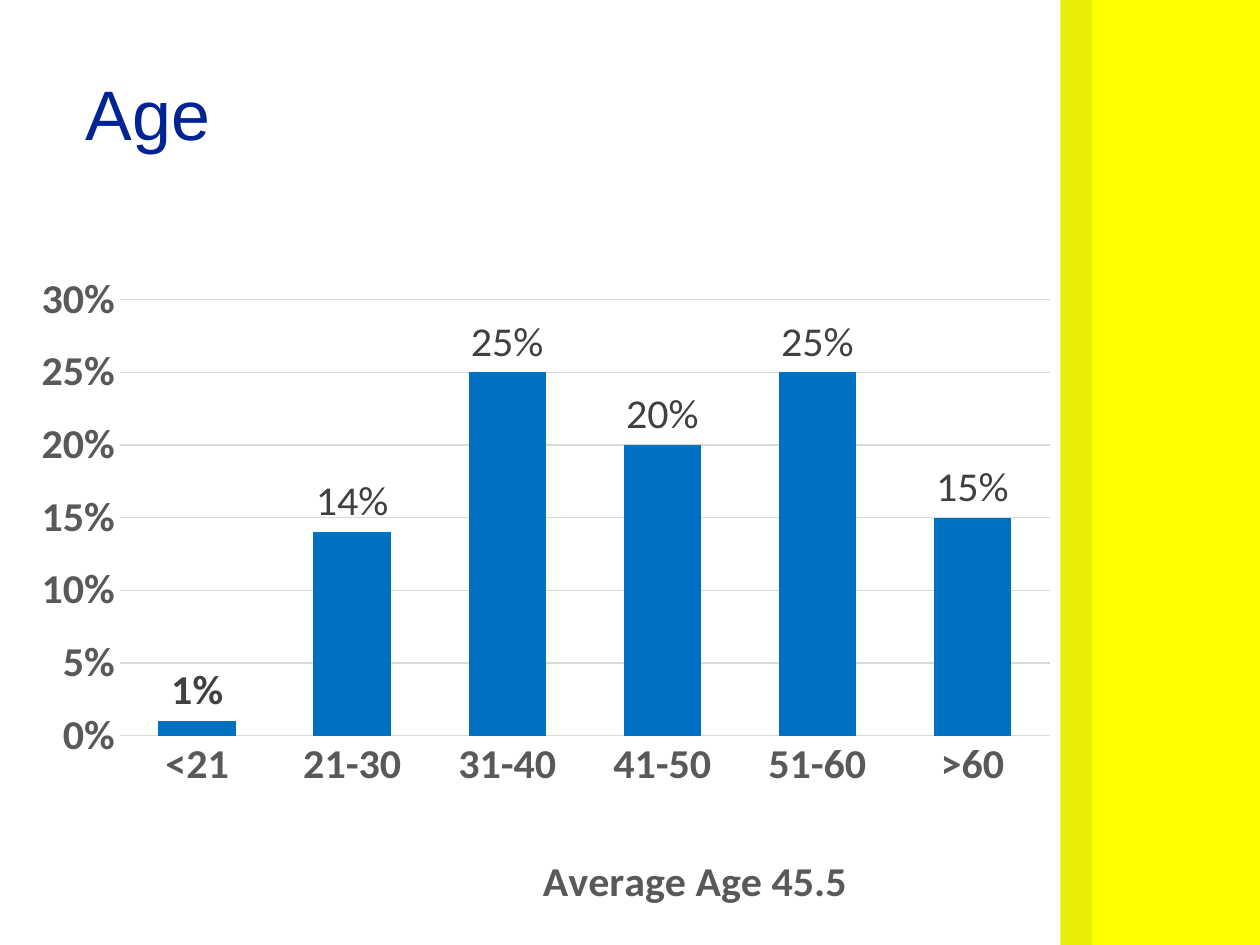
import pptx
import pptx.chart.data
import pptx.dml.color
import pptx.enum.chart
import pptx.enum.shapes
import pptx.enum.text
import pptx.oxml
import pptx.oxml.ns
import pptx.util

Pt = pptx.util.Pt
RGBColor = pptx.dml.color.RGBColor
qn = pptx.oxml.ns.qn

YELLOW = RGBColor(0xFF, 0xFF, 0x00)
OLIVE = RGBColor(0xE9, 0xEE, 0x09)
NAVY = RGBColor(0x00, 0x23, 0x95)
BLUE = RGBColor(0x00, 0x70, 0xC0)
BLACK = RGBColor(0x00, 0x00, 0x00)
AXIS_GREY = RGBColor(0x59, 0x59, 0x59)
LABEL_GREY = RGBColor(0x40, 0x40, 0x40)
GRID_GREY = RGBColor(0xD9, 0xD9, 0xD9)

TITLE = "Age"
AXIS_TITLE = "Average Age 45.5"
AGE_SHARES = {"<21": 0.01, "21-30": 0.14, "31-40": 0.25,
              "41-50": 0.20, "51-60": 0.25, ">60": 0.15}
BANDS = [(618, 102, YELLOW), (606, 18, OLIVE)]  # left, width, colour
SLIDE_WIDTH, SLIDE_HEIGHT = 720, 540

TEXT_SHADOW = (
    '<a:effectLst xmlns:a="http://schemas.openxmlformats.org/drawingml/2006/main">'
    '<a:outerShdw blurRad="38100" dist="38100" dir="2700000" algn="tl">'
    '<a:srgbClr val="000000"><a:alpha val="43000"/></a:srgbClr>'
    '</a:outerShdw></a:effectLst>')


def style_font(font, color, bold, size=24, name="Calibri"):
    font.name, font.size, font.bold = name, Pt(size), bold
    font.color.rgb = color


def set_layout(parent, index, **settings):
    """Give a chart part a manual layout, as fractions of the chart."""
    for old in parent.findall(qn("c:layout")):
        parent.remove(old)
    entries = "".join(f'<c:{key} val="{value}"/>' for key, value in settings.items())
    parent.insert(index, pptx.oxml.parse_xml(
        '<c:layout xmlns:c="http://schemas.openxmlformats.org/drawingml/2006/chart">'
        f'<c:manualLayout>{entries}</c:manualLayout></c:layout>'))


def add_bands(slide):
    for left, width, color in BANDS:
        band = slide.shapes.add_shape(pptx.enum.shapes.MSO_SHAPE.RECTANGLE,
                                      Pt(left), 0, Pt(width), Pt(SLIDE_HEIGHT))
        band.shadow.inherit = False
        band.fill.solid()
        band.fill.fore_color.rgb = color
        band.line.fill.background()


def add_title(slide):
    frame = slide.shapes.add_textbox(Pt(42), Pt(42), Pt(540), Pt(104)).text_frame
    frame.word_wrap = True
    frame.vertical_anchor = pptx.enum.text.MSO_ANCHOR.TOP
    heading = frame.paragraphs[0]
    heading.line_spacing = 0.9
    run = heading.add_run()
    run.text = TITLE
    style_font(run.font, NAVY, False, 40, "Arial")
    properties = run.font.fill._xPr
    properties.find(qn("a:solidFill")).addnext(pptx.oxml.parse_xml(TEXT_SHADOW))


def add_age_chart(slide):
    data = pptx.chart.data.CategoryChartData(number_format="0%")
    data.categories = list(AGE_SHARES)
    data.add_series("Series 1", list(AGE_SHARES.values()))
    chart = slide.shapes.add_chart(
        pptx.enum.chart.XL_CHART_TYPE.COLUMN_CLUSTERED,
        Pt(12), Pt(150), Pt(600), Pt(376), data).chart
    chart.has_legend = chart.has_title = False
    style_font(chart.font, BLACK, False)

    ages, shares = chart.category_axis, chart.value_axis
    for axis in (ages, shares):
        axis.major_tick_mark = axis.minor_tick_mark = pptx.enum.chart.XL_TICK_MARK.NONE
        style_font(axis.tick_labels.font, AXIS_GREY, True)
    ages.format.line.color.rgb = GRID_GREY
    ages.format.line.width = Pt(1)
    caption = ages.axis_title.text_frame.paragraphs[0]
    caption.text = AXIS_TITLE
    style_font(caption.font, AXIS_GREY, True)
    set_layout(ages.axis_title._element, 1, xMode="edge", yMode="edge", x=0.49, y=0.91)

    shares.minimum_scale, shares.maximum_scale, shares.major_unit = 0, 0.3, 0.05
    shares.tick_labels.number_format = "0%"
    shares.tick_labels.number_format_is_linked = False
    shares.format.line.fill.background()
    shares.major_gridlines.format.line.color.rgb = GRID_GREY
    shares.major_gridlines.format.line.width = Pt(0.75)

    plot = chart.plots[0]
    plot.gap_width, plot.overlap = 100, -24
    plot.vary_by_categories = False
    set_layout(plot._element.getparent(), 0, layoutTarget="inner",
               xMode="edge", yMode="edge", x=0.094, y=0.058, w=0.886, h=0.68)

    columns = plot.series[0]
    columns.format.fill.solid()
    columns.format.fill.fore_color.rgb = BLUE
    above = pptx.enum.chart.XL_LABEL_POSITION.OUTSIDE_END
    labels = columns.data_labels
    labels.show_value = True
    labels.number_format, labels.number_format_is_linked = "0%", False
    labels.position = above
    style_font(labels.font, LABEL_GREY, True)
    for index in range(1, len(AGE_SHARES)):  # only the first label is bold
        label = columns.points[index].data_label
        style_font(label.font, LABEL_GREY, False)
        label.position = above


def main():
    deck = pptx.Presentation()
    deck.slide_width, deck.slide_height = Pt(SLIDE_WIDTH), Pt(SLIDE_HEIGHT)
    slide = deck.slides.add_slide(deck.slide_layouts[6])
    add_bands(slide)
    add_age_chart(slide)
    add_title(slide)
    deck.save("out.pptx")


if __name__ == "__main__":
    main()
